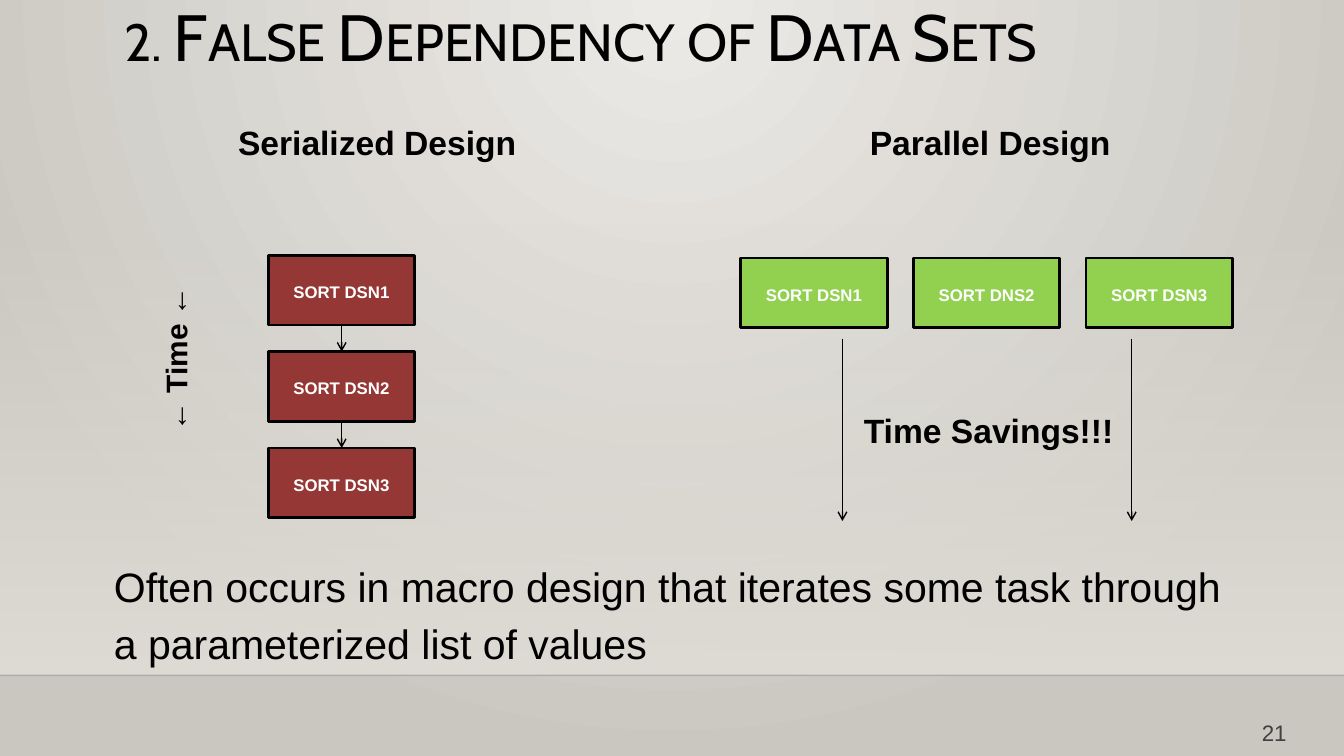
from lxml.etree import SubElement
from pptx import Presentation
from pptx.dml.color import RGBColor
from pptx.enum.shapes import MSO_CONNECTOR, MSO_SHAPE
from pptx.enum.text import MSO_ANCHOR, MSO_AUTO_SIZE, PP_ALIGN
from pptx.oxml import parse_xml
from pptx.oxml.ns import nsdecls, qn
from pptx.util import Cm, Pt


def color(value):
    """Turn a hex string into a colour."""
    return RGBColor.from_string(value)


def gradient(stops, direction):
    """Build a gradient fill from (position, colour, opacity) stops in percent."""
    marks = "".join(
        f'<a:gs pos="{position * 1000}"><a:srgbClr val="{value}">'
        f'<a:alpha val="{opacity * 1000}"/></a:srgbClr></a:gs>'
        for position, value, opacity in stops
    )
    return parse_xml(
        f'<a:gradFill {nsdecls("a")} rotWithShape="1"><a:gsLst>{marks}</a:gsLst>'
        f"{direction}</a:gradFill>"
    )


def write(shape, text, size, ink="000000", bold=False, align=PP_ALIGN.LEFT,
          spacing=1.15, font="Arial", anchor=MSO_ANCHOR.TOP, insets=(0.33, 0.18)):
    """Put one formatted paragraph into a shape."""
    frame = shape.text_frame
    frame.text = text
    frame.word_wrap = True
    frame.auto_size = MSO_AUTO_SIZE.NONE
    frame.vertical_anchor = anchor
    frame.margin_left = frame.margin_right = Cm(insets[0])
    frame.margin_top = frame.margin_bottom = Cm(insets[1])
    paragraph = frame.paragraphs[0]
    paragraph.alignment = align
    paragraph.line_spacing = spacing
    paragraph.space_before = Pt(0)
    run = paragraph.runs[0]
    run.font.name = font
    run.font.size = Pt(size)
    run.font.bold = bold
    run.font.color.rgb = color(ink)


def add_label(slide, box, text, size, **style):
    """Add a text box with one paragraph."""
    label = slide.shapes.add_textbox(*map(Cm, box))
    write(label, text, size, **style)
    return label


def add_line(slide, start, end, ink="000000", arrow=True):
    """Add a thin line, with an arrowhead at its end if wanted."""
    line = slide.shapes.add_connector(MSO_CONNECTOR.STRAIGHT, *map(Cm, start + end))
    line.line.color.rgb = color(ink)
    line.line.width = Pt(1)
    SubElement(line.element.spPr, qn("a:effectLst"))
    if arrow:
        SubElement(line.element.spPr.find(qn("a:ln")), qn("a:tailEnd"), type="arrow")
    return line


def add_step(slide, left, top, text, fill):
    """Add one sort step."""
    step = slide.shapes.add_shape(MSO_SHAPE.RECTANGLE, Cm(left), Cm(top), Cm(3.69), Cm(1.76))
    step.shadow.inherit = False
    step.fill.solid()
    step.fill.fore_color.rgb = color(fill)
    step.line.color.rgb = color("000000")
    step.line.width = Pt(2)
    write(step, text, 12, ink="FFFFFF", bold=True, align=PP_ALIGN.CENTER,
          anchor=MSO_ANCHOR.MIDDLE)


def add_backdrop(slide, width, height):
    """Paint the radial background, the wall fade and the floor edge."""
    background = parse_xml(f'<p:bg {nsdecls("p", "a")}><p:bgPr><a:effectLst/></p:bgPr></p:bg>')
    radial = '<a:path path="circle"><a:fillToRect l="43000" r="43000" b="100000"/></a:path>'
    background[0].insert(0, gradient([(0, "ECEAE7", 100), (100, "CAC7C1", 100)], radial))
    slide.element.cSld.insert(0, background)

    floor = height - 2.03
    wall = slide.shapes.add_shape(MSO_SHAPE.RECTANGLE, 0, Cm(5.61), Cm(width), Cm(floor - 5.61))
    wall.shadow.inherit = False
    wall.line.fill.background()
    wall.fill.background()
    properties = wall.element.spPr
    properties.replace(
        properties.find(qn("a:noFill")),
        gradient([(0, "DFDBD5", 0), (100, "DFDBD5", 100)], '<a:lin ang="5400000" scaled="0"/>'),
    )
    edge = add_line(slide, (0, floor), (width, floor), "000001", arrow=False)
    tone = next(edge.element.iter(qn("a:srgbClr")))
    SubElement(tone, qn("a:alpha"), val="20000")
    for position, part in enumerate((wall, edge), start=2):
        slide.shapes.element.insert(position, part.element)


def add_title(slide, box):
    """Place the title in small capitals."""
    title = slide.shapes.title
    title.left, title.top, title.width, title.height = map(Cm, box)
    write(title, "2. False Dependency of Data Sets", 46.7, spacing=0.9, font="Cabin",
          anchor=MSO_ANCHOR.MIDDLE, insets=(0.25, 0.13))
    next(title.element.iter(qn("a:rPr"))).set("cap", "small")


def add_remark(slide, box):
    """Place the closing remark in the body placeholder, without a bullet."""
    body = slide.placeholders[1]
    body.left, body.top, body.width, body.height = map(Cm, box)
    write(body, "Often occurs in macro design that iterates some task through "
                "a parameterized list of values", 29.3)
    properties = next(body.element.iter(qn("a:pPr")))
    properties.set("marL", "0")
    properties.set("indent", "0")
    SubElement(properties, qn("a:buNone"))


def add_serialized_design(slide, left, top):
    """Draw the steps that run one after another."""
    add_label(slide, (left + 3.47, top, 8.1, 1.37), "Serialized Design", 24, bold=True)
    time = add_label(slide, (left - 0.02, top + 5.61, 4.32, 1.37), "← Time ←", 21.3, bold=True)
    time.rotation = 270
    step_left, step_top, pitch = left + 4.56, top + 3.69, 2.43
    center = step_left + 1.85
    for index in range(3):
        row = step_top + index * pitch
        add_step(slide, step_left, row, f"SORT DSN{index + 1}", "953735")
        if index < 2:
            add_line(slide, (center, row + 1.76), (center, row + pitch))


def add_parallel_design(slide, left, top):
    """Draw the steps that run side by side."""
    add_label(slide, (left + 2.92, top, 6.86, 1.37), "Parallel Design", 24, bold=True)
    for index, text in enumerate(("SORT DSN1", "SORT DNS2", "SORT DSN3")):
        add_step(slide, left + index * 4.35, top + 3.76, text, "92D050")
    for offset in (2.56, 9.85):
        add_line(slide, (left + offset, top + 5.79), (left + offset, top + 10.39))
    add_label(slide, (left + 3.1, top + 7.44, 6.68, 1.63), "Time Savings!!!", 24,
              bold=True, insets=(0, 0))


def main():
    """Build and save the slide."""
    presentation = Presentation()
    width, height = 33.87, 19.05
    presentation.slide_width, presentation.slide_height = Cm(width), Cm(height)
    slide = presentation.slides.add_slide(presentation.slide_layouts[1])
    add_backdrop(slide, width, height)
    add_title(slide, (2.88, 0, 28.17, 2.03))
    add_serialized_design(slide, 2.2, 2.74)
    add_parallel_design(slide, 18.67, 2.74)
    add_remark(slide, (2.54, 13.79, 29.06, 3.1))
    add_label(slide, (31.55, 17.98, 1.22, 0.94), "21", 16, ink="404040", spacing=1,
              insets=(0.25, 0.13))
    presentation.save("out.pptx")


if __name__ == "__main__":
    main()
